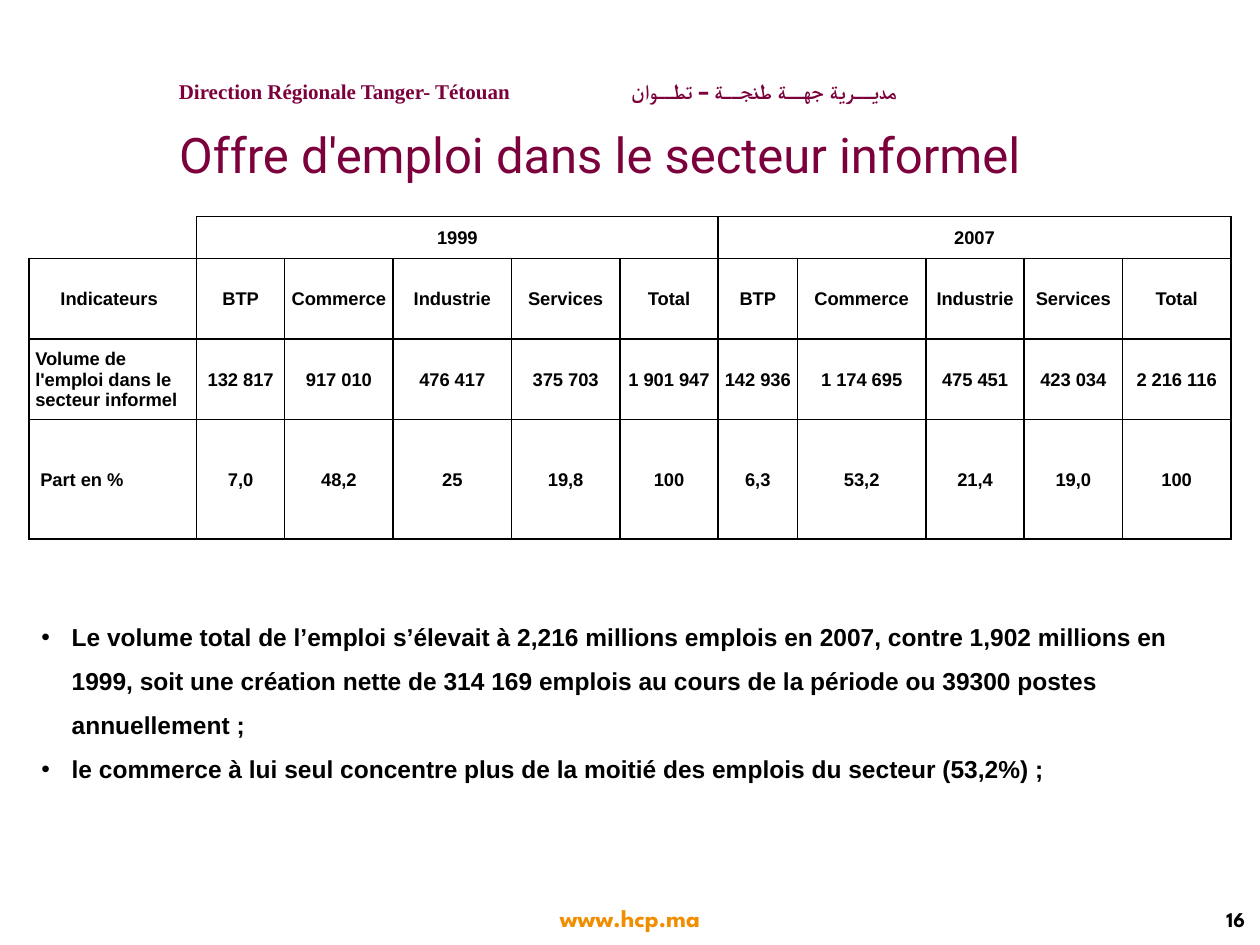
from lxml.etree import SubElement
from pptx import Presentation
from pptx.dml.color import RGBColor
from pptx.enum.text import MSO_ANCHOR, PP_ALIGN
from pptx.oxml.ns import qn
from pptx.util import Inches, Pt

PLUM, ORANGE, BLACK, WHITE = "7B003B", "F18E00", "000000", "FFFFFF"

HEADER = "Direction Régionale Tanger- Tétouan\tمديــرية جهــة طنجــة – تطــوان"
TITLE = "Offre d'emploi dans le secteur informel"
SITE, PAGE_NUMBER = "www.hcp.ma", "16"
BULLETS = [
    "Le volume total de l’emploi s’élevait à 2,216 millions emplois en 2007, "
    "contre 1,902 millions en 1999, soit une création nette de 314 169 emplois "
    "au cours de la période ou 39300 postes annuellement ;",
    "le commerce à lui seul concentre plus de la moitié des emplois du secteur (53,2%) ;",
]

YEARS = ["1999", "2007"]
SECTORS = ["BTP", "Commerce", "Industrie", "Services", "Total"]
ROWS = [
    [""] + [text for year in YEARS for text in [year] + [""] * (len(SECTORS) - 1)],
    ["Indicateurs"] + SECTORS * len(YEARS),
    ["Volume de\nl'emploi dans le\nsecteur informel",
     "132 817", "917 010", "476 417", "375 703", "1 901 947",
     "142 936", "1 174 695", "475 451", "423 034", "2 216 116"],
    ["Part en %", "7,0", "48,2", "25", "19,8", "100",
     "6,3", "53,2", "21,4", "19,0", "100"],
]
LABEL_INSETS = [0.01, 0.25, 0.05, 0.09]
COLUMN_WIDTHS = [1.33, 0.7, 0.86, 0.94, 0.86, 0.78, 0.63, 1.02, 0.78, 0.78, 0.86]
ROW_HEIGHTS = [0.33, 0.64, 0.64, 0.95]


def rgb(color):
    return RGBColor.from_string(color)


def style(para, size, font, color, bold, align):
    para.alignment = align
    for span in para.runs:
        span.font.size = Pt(size)
        span.font.name = font
        span.font.bold = bold
        span.font.color.rgb = rgb(color)


def add_text(page, place, text, size, font, color, bold=True,
             align=PP_ALIGN.CENTER, anchor=MSO_ANCHOR.TOP):
    box = page.shapes.add_textbox(*map(Inches, place))
    frame = box.text_frame
    frame.word_wrap = True
    frame.vertical_anchor = anchor
    frame.text = text
    for para in frame.paragraphs:
        style(para, size, font, color, bold, align)
    return frame


def add_tab_stop(para, position):
    stops = SubElement(para._p.get_or_add_pPr(), qn("a:tabLst"))
    SubElement(stops, qn("a:tab"), pos=str(Inches(position)), algn="l")


def add_bullet(para, indent):
    properties = para._p.get_or_add_pPr()
    properties.set("marL", str(Inches(indent)))
    properties.set("indent", str(-Inches(indent)))
    SubElement(properties, qn("a:buFont"), typeface="Arial")
    SubElement(properties, qn("a:buChar"), char="•")


def set_borders(cell, sides):
    """Draw the named sides (L, R, T, B) and clear the others."""
    properties = cell._tc.get_or_add_tcPr()
    for index, side in enumerate("LRTB"):
        line = SubElement(properties, qn(f"a:ln{side}"), w=str(Pt(1)))
        if side in sides:
            fill = SubElement(line, qn("a:solidFill"))
            SubElement(fill, qn("a:srgbClr"), val=BLACK)
        else:
            SubElement(line, qn("a:noFill"))
        properties.insert(index, line)


def fill_cell(cell, row, column, text):
    cell.fill.solid()
    cell.fill.fore_color.rgb = rgb(WHITE)
    cell.vertical_anchor = MSO_ANCHOR.MIDDLE
    cell.margin_left = Inches(LABEL_INSETS[row] if column == 0 else 0.01)
    cell.margin_right = cell.margin_top = Inches(0.01)
    cell.margin_bottom = 0
    cell.text_frame.text = text
    align = PP_ALIGN.LEFT if column == 0 else PP_ALIGN.CENTER
    for para in cell.text_frame.paragraphs:
        style(para, 10.5, "Arial", BLACK, True, align)
    set_borders(cell, "RB" if row == column == 0 else "LRTB")


def add_jobs_table(page):
    place = (0.23, 1.72, sum(COLUMN_WIDTHS), sum(ROW_HEIGHTS))
    table = page.shapes.add_table(
        len(ROWS), len(COLUMN_WIDTHS), *map(Inches, place)).table
    table.first_row = table.horz_banding = False
    for column, width in zip(table.columns, COLUMN_WIDTHS):
        column.width = Inches(width)
    for row, height in zip(table.rows, ROW_HEIGHTS):
        row.height = Inches(height)
    for row, texts in enumerate(ROWS):
        for column, text in enumerate(texts):
            fill_cell(table.cell(row, column), row, column, text)
    for index in range(len(YEARS)):
        first = 1 + index * len(SECTORS)
        table.cell(0, first).merge(table.cell(0, first + len(SECTORS) - 1))


def main():
    deck = Presentation()
    deck.slide_width, deck.slide_height = Inches(10), Inches(7.5)
    page = deck.slides.add_slide(deck.slide_layouts[6])

    add_text(page, (3.82, 7.12, 2.36, 0.33), SITE, 14, "League Spartan", ORANGE)
    add_text(page, (8.46, 7.12, 1.52, 0.35), PAGE_NUMBER, 12, "League Spartan",
             BLACK, align=PP_ALIGN.RIGHT, anchor=MSO_ANCHOR.MIDDLE)
    add_text(page, (1.09, 0.94, 7.34, 0.57), TITLE, 28, "Roboto", PLUM, bold=False)
    add_jobs_table(page)

    notes = add_text(page, (0.23, 4.77, 9.45, 1.75), "\n".join(BULLETS), 14,
                     "Arial", BLACK, align=PP_ALIGN.LEFT)
    for para in notes.paragraphs:
        para.line_spacing = 1.5
        add_bullet(para, 0.24)

    header = add_text(page, (1.09, 0.61, 6.8, 0.23), HEADER, 12, "Times New Roman",
                      PLUM, align=PP_ALIGN.LEFT, anchor=MSO_ANCHOR.MIDDLE)
    header.margin_left = Inches(0.33)
    header.margin_top = header.margin_bottom = 0
    add_tab_stop(header.paragraphs[0], 3.59)

    deck.save("out.pptx")


if __name__ == "__main__":
    main()
